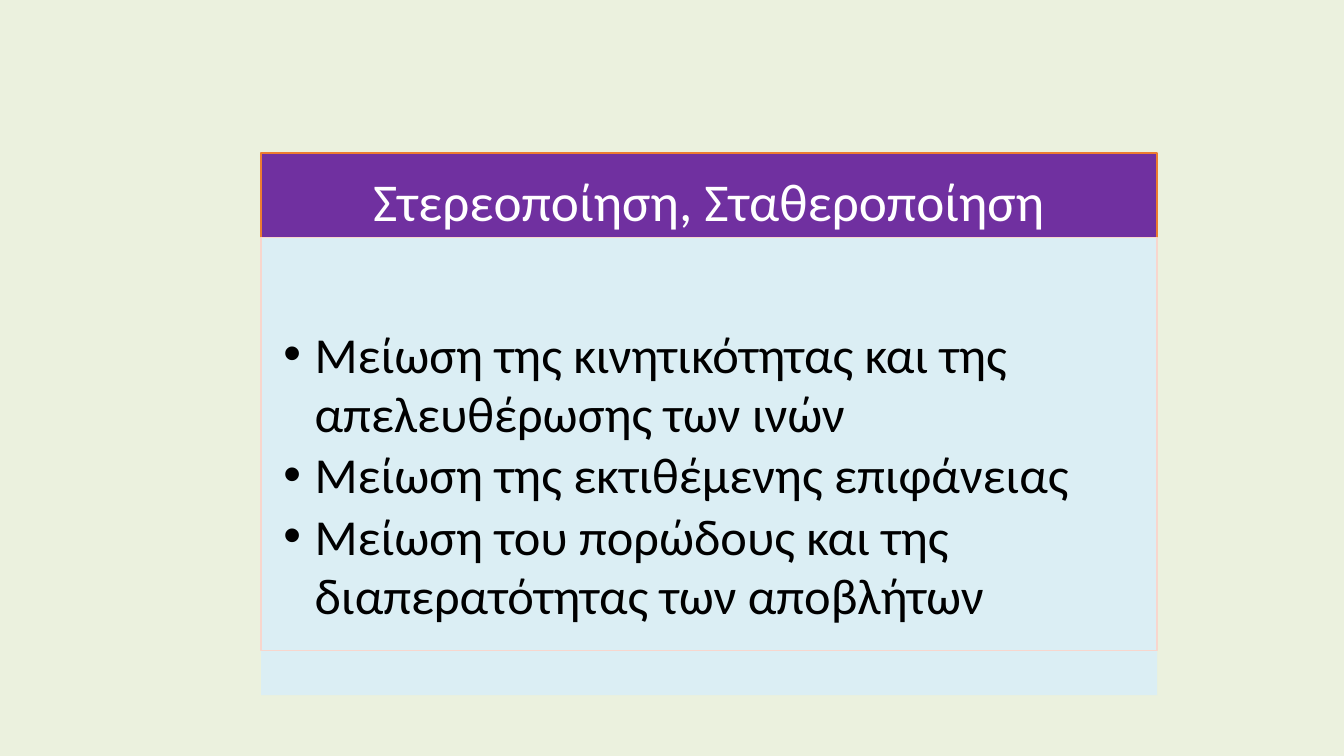
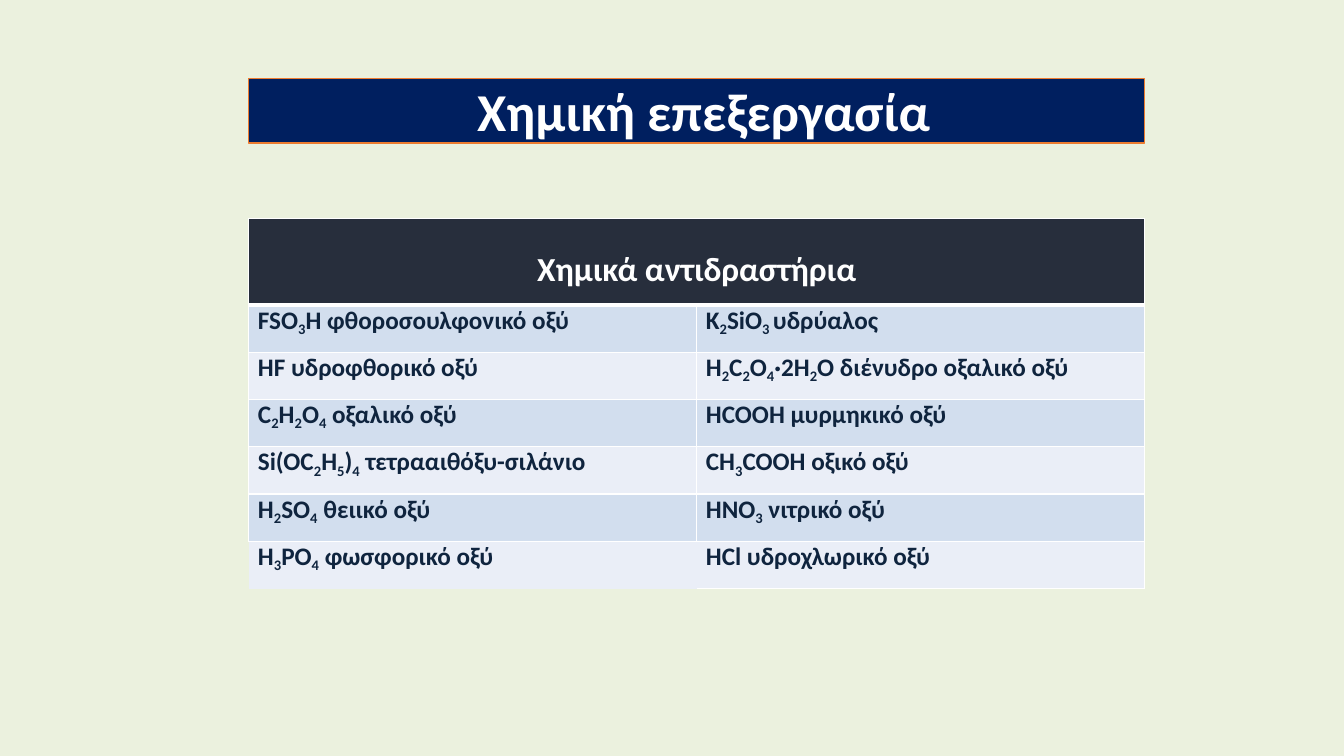
from dataclasses import dataclass

from lxml.etree import SubElement
from pptx import Presentation
from pptx.dml.color import RGBColor as RGB
from pptx.enum.shapes import MSO_SHAPE as SHAPE
from pptx.enum.text import MSO_ANCHOR as ANCHOR, PP_ALIGN as ALIGN
from pptx.oxml.ns import qn
from pptx.util import Cm, Pt


@dataclass(frozen=True)
class Theme:
    font: str = "Calibri"
    page: str = "EBF1DE"
    white: str = "FFFFFF"
    black: str = "000000"
    purple: str = "7030A0"
    navy: str = "001F5F"
    orange: str = "EC7C30"
    panel: str = "DBEEF4"
    frame: str = "F8D6CD"
    header: str = "272E3C"
    cell_text: str = "0F243E"
    bands: tuple = ("D2DEEE", "EAEEF7")
    title_size: int = 38
    body_size: int = 36
    header_size: int = 24
    cell_size: int = 18


T = Theme()
BLOCK_W = 22.58
NO_STYLE = "{2D5ABB26-0587-4C30-8999-92F81FD0307C}"

BENEFITS = [
    "Μείωση της κινητικότητας και της απελευθέρωσης των ινών",
    "Μείωση της εκτιθέμενης επιφάνειας",
    "Μείωση του πορώδους και της διαπερατότητας των αποβλήτων",
]
REAGENTS = [
    ("FSO_3_H φθοροσουλφονικό οξύ", "K_2_SiO_3 _υδρύαλος"),
    ("HF υδροφθορικό οξύ", "H_2_C_2_O_4_·2H_2_O διένυδρο οξαλικό οξύ"),
    ("C_2_H_2_O_4_ οξαλικό οξύ", "HCOOH μυρμηκικό οξύ"),
    ("Si(OC_2_H_5_)_4_ τετρααιθόξυ-σιλάνιο", "CH_3_COOH οξικό οξύ"),
    ("H_2_SO_4_ θειικό οξύ", "HNO_3_ νιτρικό οξύ"),
    ("H_3_PO_4_ φωσφορικό οξύ", "HCl υδροχλωρικό οξύ"),
]


def write(p, text, size, color, bold=False, align=ALIGN.LEFT):
    p.alignment = align
    for i, part in enumerate(text.split("_")):
        if not part:
            continue
        r = p.add_run()
        r.text = part
        r.font.name = T.font
        r.font.size = Pt(size)
        r.font.bold = bold
        r.font.color.rgb = RGB.from_string(color)
        if i % 2:
            r.font._element.set("baseline", "-21000")


def set_margins(box, left=0, top=0):
    box.margin_left, box.margin_top = Cm(left), Cm(top)
    box.margin_right = box.margin_bottom = 0
    box.vertical_anchor = ANCHOR.TOP


def add_box(s, x, y, h, fill=None, line=None):
    sp = s.shapes.add_shape(SHAPE.RECTANGLE, Cm(x), Cm(y), Cm(BLOCK_W), Cm(h))
    sp.shadow.inherit = False
    if fill:
        sp.fill.solid()
        sp.fill.fore_color.rgb = RGB.from_string(fill)
    else:
        sp.fill.background()
    if line:
        sp.line.color.rgb = RGB.from_string(line)
        sp.line.width = Pt(1)
    else:
        sp.line.fill.background()
    return sp


def add_title(s, text, x, y, h, fill, bold=False, left=0, top=0):
    tf = add_box(s, x, y, h, fill, T.orange).text_frame
    tf.word_wrap = True
    set_margins(tf, left, top)
    write(tf.paragraphs[0], text, T.title_size, T.white, bold, ALIGN.CENTER)


def add_bullets(s, items, x, y, w, h):
    tf = s.shapes.add_textbox(Cm(x), Cm(y), Cm(w), Cm(h)).text_frame
    tf.word_wrap = True
    set_margins(tf)
    for i, item in enumerate(items):
        p = tf.add_paragraph() if i else tf.paragraphs[0]
        pPr = p._p.get_or_add_pPr()
        pPr.set("marL", str(Cm(0.84)))
        pPr.set("indent", str(-Cm(0.79)))
        SubElement(pPr, qn("a:buFont"), typeface="Arial")
        SubElement(pPr, qn("a:buChar"), char="•")
        p.line_spacing = Pt(42)
        if i:
            p.space_before = Pt(2)
        write(p, item, T.body_size, T.black)


def set_borders(cell, widths):
    tcPr = cell._tc.get_or_add_tcPr()
    for side in "LRTB":
        if side in widths:
            ln = SubElement(tcPr, qn(f"a:ln{side}"), w=str(Pt(widths[side])))
            fill = SubElement(ln, qn("a:solidFill"))
            SubElement(fill, qn("a:srgbClr"), val=T.white)


def fill_cell(cell, text, size, color, fill, borders, align=ALIGN.LEFT, left=0, top=0):
    set_margins(cell, left, top)
    set_borders(cell, borders)
    cell.fill.solid()
    cell.fill.fore_color.rgb = RGB.from_string(fill)
    write(cell.text_frame.paragraphs[0], text, size, color, True, align)


def add_reagents(s, x, y):
    head_h, row_h = 2.18, 1.19
    last = len(REAGENTS)
    gf = s.shapes.add_table(last + 1, 2, Cm(x), Cm(y), Cm(BLOCK_W), Cm(head_h + last * row_h))
    table = gf.table
    table.first_row = table.horz_banding = False
    table._tbl.tblPr[0].text = NO_STYLE
    for i, row in enumerate(table.rows):
        row.height = Cm(row_h if i else head_h)
    thin = dict.fromkeys("LRTB", 1)
    table.cell(0, 0).merge(table.cell(0, 1))
    for cell in table.rows[0].cells:
        set_borders(cell, {**thin, "B": 3}) if cell.is_spanned else fill_cell(
            cell, "Χημικά αντιδραστήρια", T.header_size, T.white, T.header,
            {**thin, "B": 3}, ALIGN.CENTER, top=0.77)
    for i, names in enumerate(REAGENTS, 1):
        for j, name in enumerate(names):
            borders = {**thin, "T": 3 if i == 1 else 1}
            if i == last:
                borders = {"T": 1, "R": 1, "B": 1} if j else {}
            elif i == last - 1 and j == 0:
                borders.pop("B")
            fill_cell(table.cell(i, j), name, T.cell_size, T.cell_text,
                      T.bands[(i - 1) % 2], borders, left=0.23)


def stabilisation_slide(s):
    x, y, band_h = 6.58, 3.86, 2.13
    body_y = y + band_h
    add_title(s, "Στερεοποίηση, Σταθεροποίηση", x, y, band_h, T.purple, top=0.38)
    add_box(s, x, body_y, 11.53, fill=T.panel)
    add_box(s, x, body_y, 10.41, line=T.frame)
    add_bullets(s, BENEFITS, 7.09, 8.18, 21.3, 7.5)


def chemical_slide(s):
    x = 6.27
    add_title(s, "Χημική επεξεργασία", x, 1.98, 1.63, T.navy, bold=True, left=0.36)
    add_reagents(s, x, 5.51)


def main():
    prs = Presentation()
    prs.slide_width, prs.slide_height = Cm(33.87), Cm(19.05)
    bg = prs.slide_master.background.fill
    bg.solid()
    bg.fore_color.rgb = RGB.from_string(T.page)
    for build in (stabilisation_slide, chemical_slide):
        build(prs.slides.add_slide(prs.slide_layouts[6]))
    prs.save("out.pptx")


if __name__ == "__main__":
    main()
